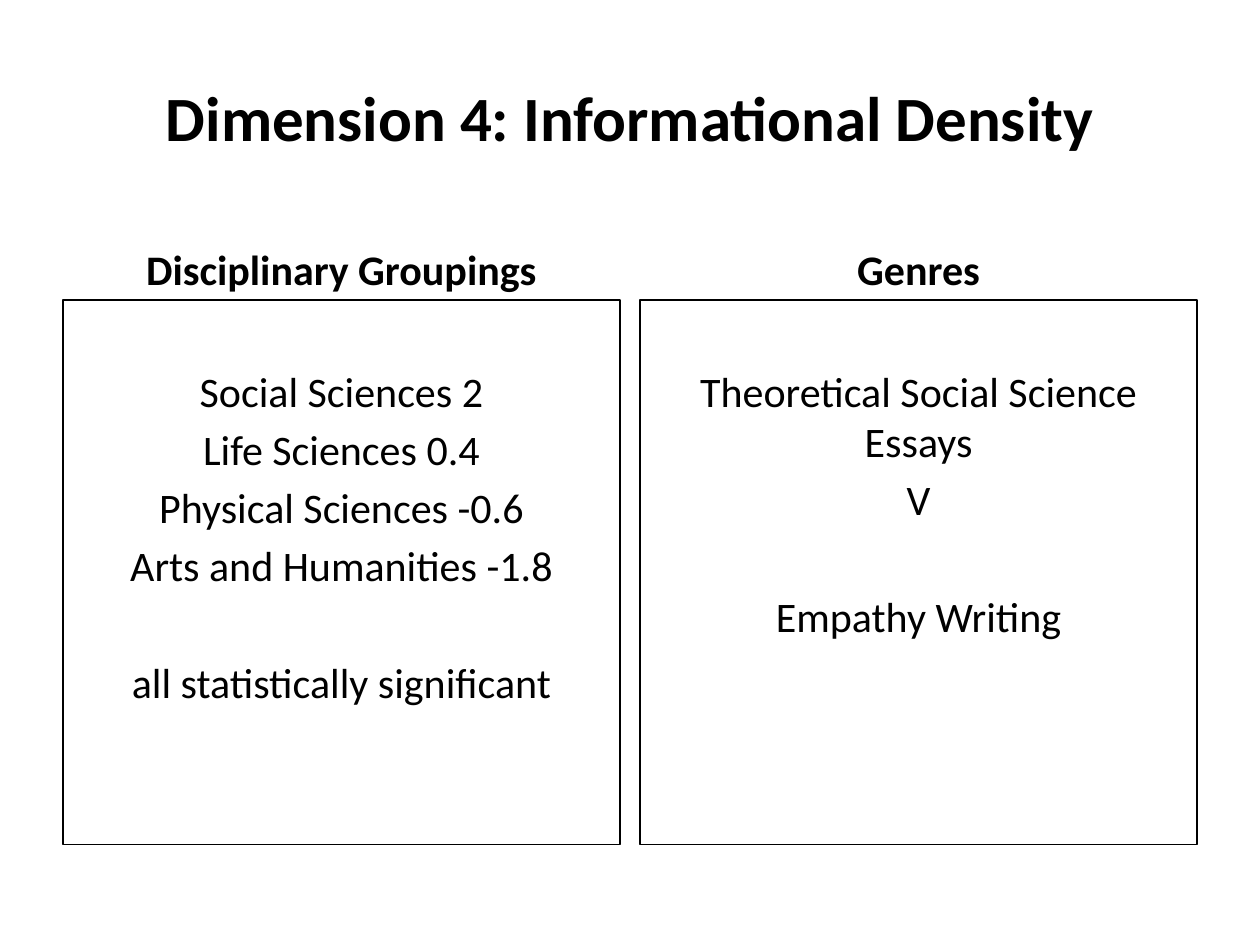
from pptx import Presentation
from pptx.dml.color import RGBColor
from pptx.enum.shapes import MSO_SHAPE as Shape
from pptx.enum.text import MSO_ANCHOR as Anchor, PP_ALIGN as Align
from pptx.util import Inches, Pt

BLACK = RGBColor(0, 0, 0)
WIDTH = 4.42
TIGHT, WIDE = 4.4, 38.1  # space before a line, in points

COLUMNS = [
    (0.5, "Disciplinary Groupings", [
        ("Social Sciences 2", 0),
        ("Life Sciences 0.4", TIGHT),
        ("Physical Sciences -0.6", TIGHT),
        ("Arts and Humanities -1.8", TIGHT),
        ("all statistically significant", WIDE),
    ]),
    (5.08, "Genres", [
        ("Theoretical Social Science Essays", 0),
        ("V", TIGHT),
        ("Empathy Writing", WIDE),
    ]),
]


def write(shape, lines, size, bold, anchor):
    """Fill a shape with centred lines, each a (text, space before) pair."""
    frame = shape.text_frame
    frame.word_wrap = True
    frame.vertical_anchor = anchor
    for i, (text, gap) in enumerate(lines):
        para = frame.add_paragraph() if i else frame.paragraphs[0]
        para.alignment = Align.CENTER
        para.space_before = Pt(gap)
        run = para.add_run()
        run.text = text
        font = run.font
        font.name = "Calibri"
        font.size = Pt(size)
        font.bold = bold
        font.color.rgb = BLACK


deck = Presentation()
deck.slide_width, deck.slide_height = Inches(10), Inches(7.5)
slide = deck.slides.add_slide(deck.slide_layouts[6])
shapes = slide.shapes

title = shapes.add_textbox(Inches(0.5), Inches(0.3), Inches(9), Inches(1.25))
write(title, [("Dimension 4: Informational Density", 0)], 36, True, Anchor.MIDDLE)

for left, name, lines in COLUMNS:
    head = shapes.add_textbox(Inches(left), Inches(1.68), Inches(WIDTH), Inches(0.7))
    write(head, [(name, 0)], 24, True, Anchor.BOTTOM)

    box = shapes.add_shape(Shape.RECTANGLE, Inches(left), Inches(2.38),
                           Inches(WIDTH), Inches(4.32))
    box.shadow.inherit = False
    box.fill.background()
    box.line.color.rgb = BLACK
    box.line.width = Pt(0.75)
    box.text_frame.margin_top = Inches(0.52)
    write(box, lines, 24, False, Anchor.TOP)

deck.save("out.pptx")
